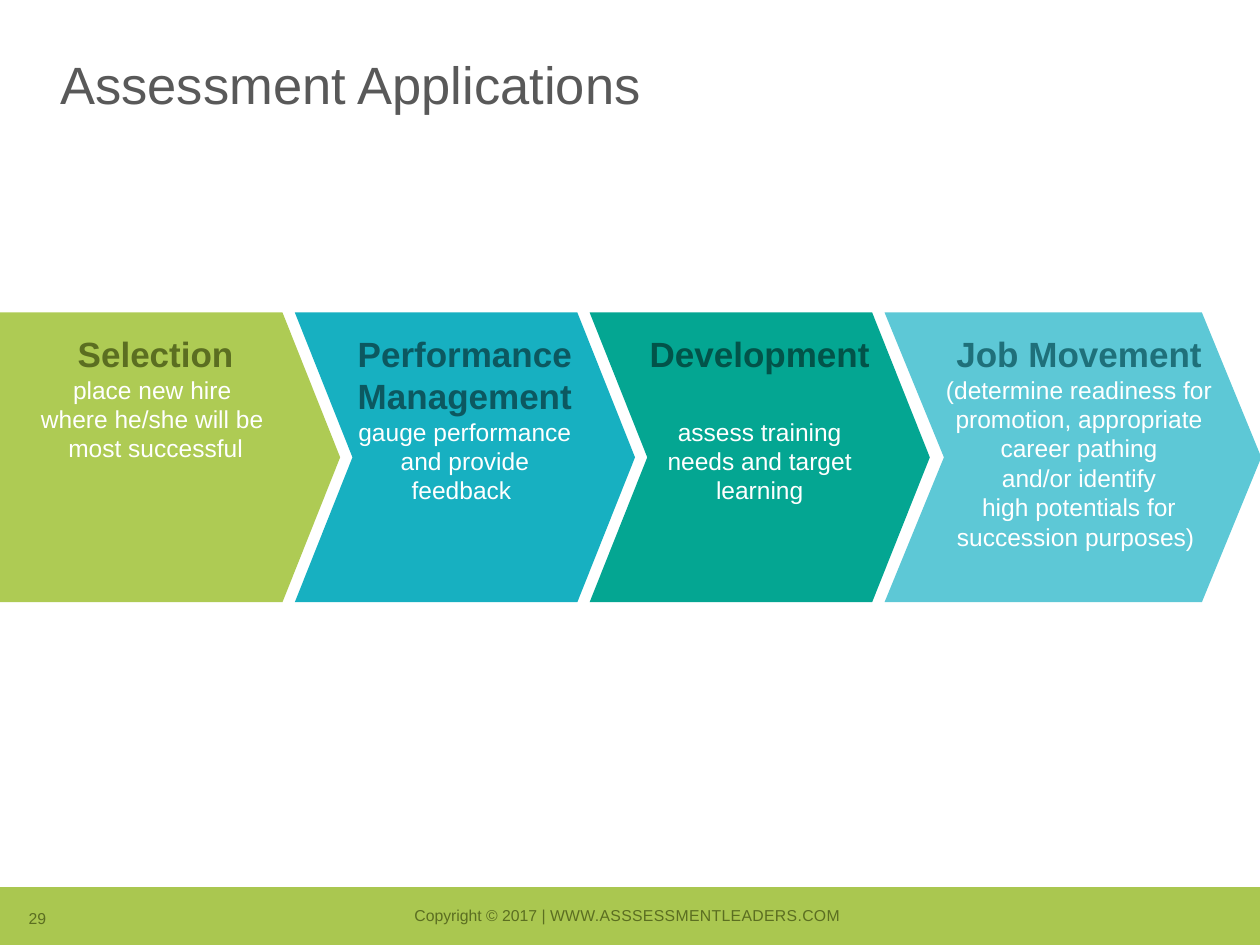
import pptx
import pptx.dml.color
import pptx.enum.shapes
import pptx.enum.text
import pptx.oxml.ns
import pptx.util
from lxml import etree
from pptx.util import Inches

SHAPE = pptx.enum.shapes.MSO_SHAPE
ANCHOR = pptx.enum.text.MSO_ANCHOR
CENTER = pptx.enum.text.PP_ALIGN.CENTER
OLIVE = "5B6E21"
STEP_PITCH = 2.34

# heading lines, description lines, fill, heading colour, width, point, left inset, wrap
STEPS = [
    (["Selection"],
     ["place new hire ", "where he/she will be ", "most successful"],
     "AECB54", OLIVE, 2.7, 0.199, 0, True),
    (["Performance", "Management"],
     ["gauge performance", "and provide", "feedback "],
     "17B0C1", "0C5860", 2.7, 0.199, 0, False),
    (["Development "],
     ["assess training needs and target learning"],
     "04A692", "025349", 2.7, 0.199, 0, True),
    (["Job Movement"],
     ["(determine readiness for", "promotion, appropriate", "career pathing",
      "and/or identify", "high potentials for", "succession purposes) "],
     "5DC8D6", "1F707A", 2.99, 0.205, 0.1, False),
]


def rgb(hex_color):
    return pptx.dml.color.RGBColor.from_string(hex_color)


def add_run(paragraph, text, size, color, bold=False):
    run = paragraph.add_run()
    run.text = text
    run.font.color.rgb = rgb(color)
    font_format = {"name": "Arial", "size": pptx.util.Pt(size), "bold": bold}
    for attribute, value in font_format.items():
        setattr(run.font, attribute, value)
    return run


def add_break(paragraph, size):
    """Add a line break that keeps the height of the text around it."""
    paragraph.add_line_break()
    line_break = paragraph._p[-1]
    etree.SubElement(line_break, pptx.oxml.ns.qn("a:rPr"), sz=str(size * 100))


def format_frame(frame, **values):
    for attribute, value in values.items():
        setattr(frame, attribute, value)


def add_block(slide, preset, left, top, width, height, fill):
    block = slide.shapes.add_shape(
        preset, Inches(left), Inches(top), Inches(width), Inches(height))
    block.shadow.inherit = False
    block.fill.solid()
    block.fill.fore_color.rgb = rgb(fill)
    block.line.fill.background()
    return block


def add_label(slide, left, top, width, height, **frame_format):
    """Add an empty text box and return its first paragraph."""
    label = slide.shapes.add_textbox(
        Inches(left), Inches(top), Inches(width), Inches(height))
    format_frame(label.text_frame, **frame_format)
    return label.text_frame.paragraphs[0]


def add_step(slide, index, heading, description, fill, heading_color,
             width, point, left_inset, wrap):
    preset = SHAPE.CHEVRON if index else SHAPE.PENTAGON
    step = add_block(slide, preset, index * STEP_PITCH, 2.48, width, 2.3, fill)
    step.adjustments[0] = point
    format_frame(step.text_frame, word_wrap=wrap, vertical_anchor=ANCHOR.TOP,
                 margin_left=Inches(left_inset), margin_right=0,
                 margin_top=Inches(0.16), margin_bottom=Inches(0.16))
    paragraph = step.text_frame.paragraphs[0]
    paragraph.alignment = CENTER
    for line in heading:
        add_run(paragraph, line, 20, heading_color, bold=True)
        add_break(paragraph, 20)
    for number, line in enumerate(description):
        if number:
            add_break(paragraph, 14)
        add_run(paragraph, line, 14, "FFFFFF")


def add_footer(slide):
    add_block(slide, SHAPE.RECTANGLE, 0, 7.04, 10, 0.46, "AAC750")
    footer_format = {"word_wrap": False, "vertical_anchor": ANCHOR.BOTTOM}
    copyright_line = add_label(slide, 3.17, 7.14, 3.65, 0.25, **footer_format)
    copyright_line.alignment = CENTER
    add_run(copyright_line, "Copyright © 2017 | ", 9, OLIVE)
    address = add_run(copyright_line, "WWW.ASSSESSMENTLEADERS.COM ", 9, OLIVE)
    address.font._element.set("spc", "20")
    page_number = add_label(slide, 0.13, 7.16, 0.36, 0.25, **footer_format)
    add_run(page_number, "29", 9, OLIVE)


def add_title(slide):
    title = add_label(slide, 0.38, 0.42, 9.25, 0.83, word_wrap=True)
    title.line_spacing = 0.9
    add_run(title, "Assessment Applications", 30, "595959")


def main():
    deck = pptx.Presentation()
    deck.slide_width, deck.slide_height = Inches(10), Inches(7.5)
    slide = deck.slides.add_slide(deck.slide_layouts[6])
    add_footer(slide)
    for index, step in reversed(list(enumerate(STEPS))):
        add_step(slide, index, *step)
    add_title(slide)
    deck.save("out.pptx")


if __name__ == "__main__":
    main()
